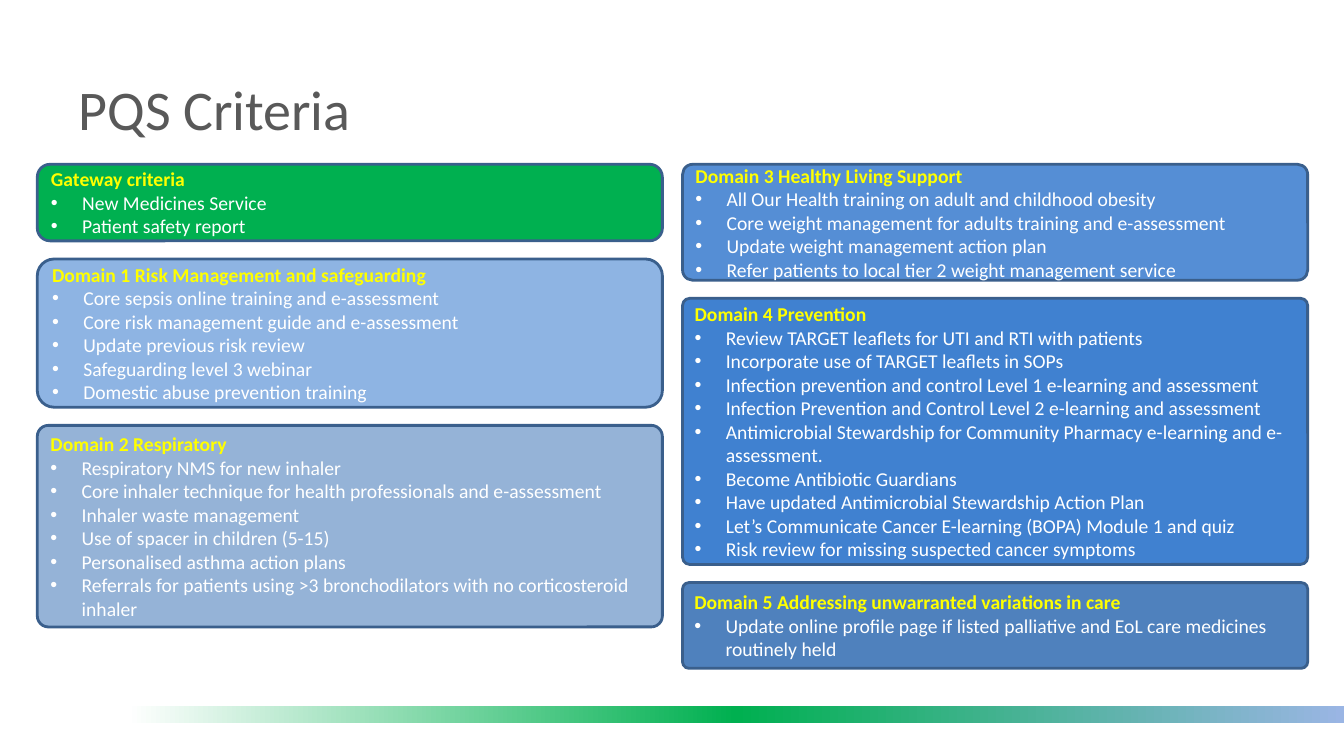
from copy import deepcopy
from lxml.etree import SubElement
from pptx import Presentation
from pptx.dml.color import RGBColor
from pptx.enum.shapes import MSO_SHAPE as Shape
from pptx.enum.text import MSO_ANCHOR as Anchor, PP_ALIGN as Align
from pptx.oxml.ns import qn
from pptx.util import Inches, Pt

TITLE = "PQS Criteria"
FONT = "Calibri"
BAR_COLOURS = ["FFFFFF", "00B050", "9AB5E4"]
COLUMNS = [
    (0.37, [
        ("Gateway criteria", "00B050", 0.76, 0.167, [
            "New Medicines Service",
            "Patient safety report",
        ]),
        ("Domain 1 Risk Management and safeguarding", "8EB4E3", 1.47, 0.113, [
            "Core sepsis online training and e-assessment",
            "Core risk management guide and e-assessment",
            "Update previous risk review",
            "Safeguarding level 3 webinar",
            "Domestic abuse prevention training",
        ]),
        ("Domain 2 Respiratory", "95B3D7", 2, 0.055, [
            "Respiratory NMS for new inhaler",
            "Core inhaler technique for health professionals and e-assessment",
            "Inhaler waste management",
            "Use of spacer in children (5-15)",
            "Personalised asthma action plans",
            "Referrals for patients using >3 bronchodilators with no corticosteroid inhaler",
        ]),
    ]),
    (6.77, [
        ("Domain 3 Healthy Living Support", "558ED5", 1.15, 0.087, [
            "All Our Health training on adult and childhood obesity",
            "Core weight management for adults training and e-assessment",
            "Update weight management action plan",
            "Refer patients to local tier 2 weight management service",
        ]),
        ("Domain 4 Prevention", "4081D0", 2.64, 0.027, [
            "Review TARGET leaflets for UTI and RTI with patients",
            "Incorporate use of TARGET leaflets in SOPs",
            "Infection prevention and control Level 1 e-learning and assessment",
            "Infection Prevention and Control Level 2 e-learning and assessment",
            "Antimicrobial Stewardship for Community Pharmacy e-learning and e-assessment.",
            "Become Antibiotic Guardians",
            "Have updated Antimicrobial Stewardship Action Plan",
            "Let’s Communicate Cancer E-learning (BOPA) Module 1 and quiz",
            "Risk review for missing suspected cancer symptoms",
        ]),
        ("Domain 5 Addressing unwarranted variations in care", "4F81BD", 0.85, 0.074, [
            "Update online profile page if listed palliative and EoL care medicines routinely held",
        ]),
    ]),
]
TOP, WIDTH, GAP, INDENT = 1.63, 6.2, 0.18, 0.31


def colour(value):
    return RGBColor.from_string(value)


def add_span(para, text, size, value, bold=False):
    para.alignment = Align.LEFT
    span = para.add_run()
    span.text = text
    span.font.name = FONT
    span.font.size = Pt(size)
    span.font.bold = bold
    span.font.color.rgb = colour(value)


def add_bullet(para):
    properties = para._p.get_or_add_pPr()
    properties.set("marL", str(Inches(INDENT)))
    properties.set("indent", str(-Inches(INDENT)))
    SubElement(properties, qn("a:buFont")).set("typeface", "Arial")
    SubElement(properties, qn("a:buChar")).set("char", "•")


def add_bar(page):
    bar = page.shapes.add_shape(
        Shape.RECTANGLE, Inches(1.26), Inches(7), Inches(12.07), Inches(0.17))
    bar.shadow.inherit = False
    bar.line.fill.background()
    bar.fill.gradient()
    bar.fill.gradient_angle = 0
    stops = bar._element.spPr.find(qn("a:gradFill")).find(qn("a:gsLst"))
    stops.append(deepcopy(stops[0]))
    for index, (stop, value) in enumerate(zip(bar.fill.gradient_stops, BAR_COLOURS)):
        stop.position = index / (len(BAR_COLOURS) - 1)
        stop.color.rgb = colour(value)


def add_title(page):
    box = page.shapes.add_textbox(
        Inches(0.68), Inches(0.29), Inches(10.79), Inches(1.56))
    box.text_frame.word_wrap = True
    box.text_frame.vertical_anchor = Anchor.MIDDLE
    add_span(box.text_frame.paragraphs[0], TITLE, 40, "595959")


def add_panel(page, left, top, heading, fill, height, corner, items):
    panel = page.shapes.add_shape(
        Shape.ROUNDED_RECTANGLE, Inches(left), Inches(top), Inches(WIDTH), Inches(height))
    panel.adjustments[0] = corner
    panel.shadow.inherit = False
    panel.fill.solid()
    panel.fill.fore_color.rgb = colour(fill)
    panel.line.color.rgb = colour("3A5F8C")
    panel.line.width = Pt(2)
    frame = panel.text_frame
    frame.word_wrap = True
    frame.vertical_anchor = Anchor.MIDDLE
    add_span(frame.paragraphs[0], heading, 14, "FFFF00", bold=True)
    for item in items:
        para = frame.add_paragraph()
        add_bullet(para)
        add_span(para, item, 14, "FFFFFF")


def main():
    deck = Presentation()
    deck.slide_width, deck.slide_height = Inches(13.33), Inches(7.5)
    page = deck.slides.add_slide(deck.slide_layouts[6])
    add_bar(page)
    add_title(page)
    for left, panels in COLUMNS:
        top = TOP
        for heading, fill, height, corner, items in panels:
            add_panel(page, left, top, heading, fill, height, corner, items)
            top += height + GAP
    deck.save("out.pptx")


if __name__ == "__main__":
    main()
